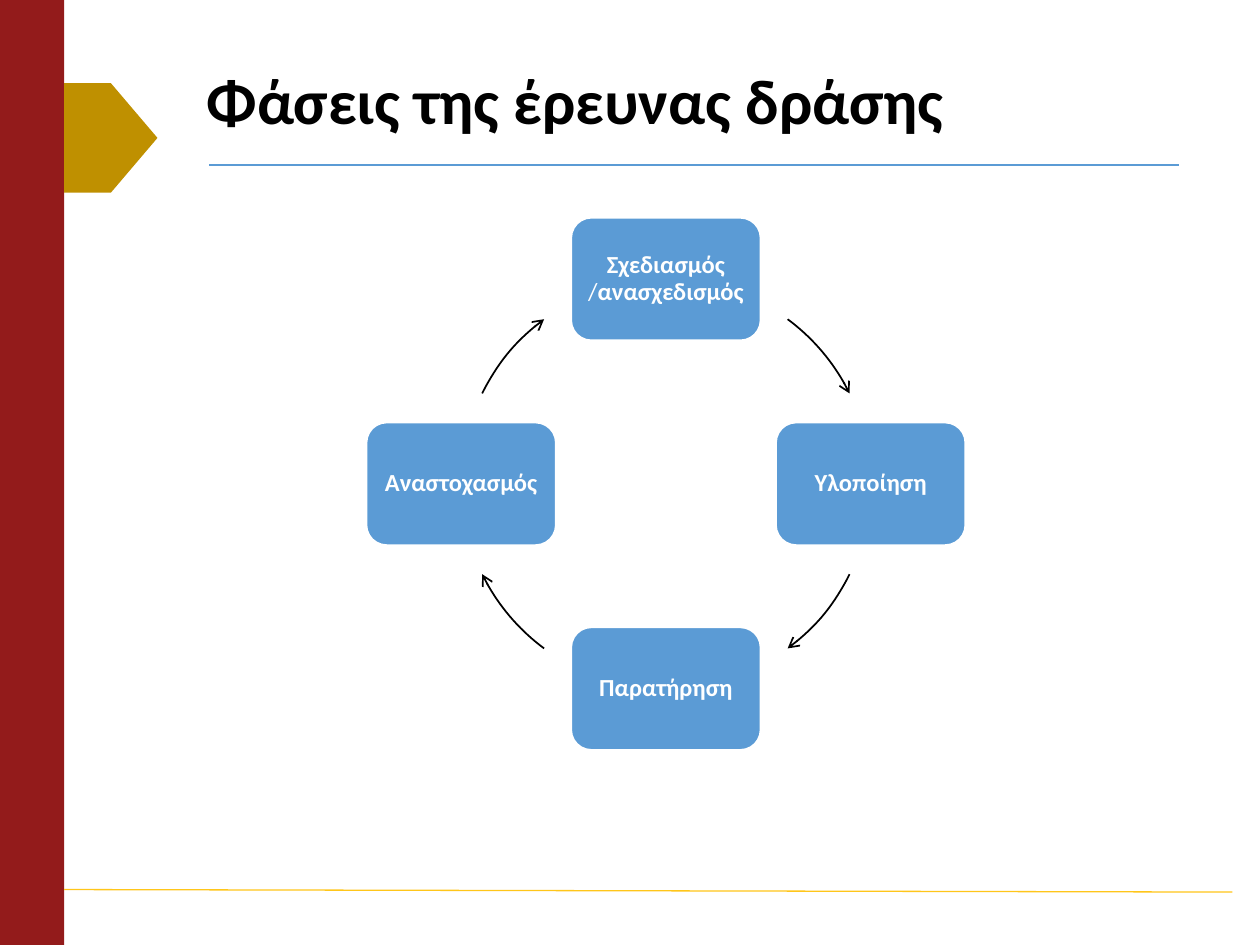
from dataclasses import dataclass

from lxml.etree import SubElement
from pptx import Presentation
from pptx.dml.color import RGBColor
from pptx.enum.shapes import MSO_CONNECTOR as Connector, MSO_SHAPE as Preset
from pptx.enum.text import MSO_ANCHOR as Anchor, MSO_AUTO_SIZE as AutoSize, PP_ALIGN as Align
from pptx.oxml.ns import qn
from pptx.util import Inches, Pt

FONT = "Calibri"
BLUE, WHITE, BLACK = "5B9BD5", "FFFFFF", "000000"
CENTER_X, CENTER_Y, RADIUS = 5.285, 3.84, 1.625
BOX_WIDTH, BOX_HEIGHT = 1.51, 0.98


@dataclass
class Phase:
    runs: list[tuple[str, bool]]  # text, bold
    dx: int  # direction from the centre of the cycle
    dy: int
    arc_start: float  # arrow to the next phase, clockwise degrees
    arc_end: float


PHASES = [
    Phase([("Σχεδιασμός", True), (" /", False), ("ανασχεδισμός", True)], 0, -1, 306.5, 333.8),
    Phase([("Υλοποίηση", True)], 1, 0, 26.2, 53.5),
    Phase([("Παρατήρηση", True)], 0, 1, 126.5, 153.8),
    Phase([("Αναστοχασμός", True)], -1, 0, 206.2, 233.5),
]


def color(value: str) -> RGBColor:
    return RGBColor.from_string(value)


def add_span(para, text: str, size: float, fill: str, bold: bool) -> None:
    span = para.add_run()
    span.text = text
    span.font.name = FONT
    span.font.size = Pt(size)
    span.font.bold = bold
    span.font.color.rgb = color(fill)


def add_block(page, preset, left: float, top: float, width: float, height: float, fill: str):
    block = page.shapes.add_shape(preset, Inches(left), Inches(top), Inches(width), Inches(height))
    block.shadow.inherit = False
    block.fill.solid()
    block.fill.fore_color.rgb = color(fill)
    block.line.fill.background()
    return block


def add_rule(page, x1: float, y1: float, x2: float, y2: float, stroke: str) -> None:
    rule = page.shapes.add_connector(
        Connector.STRAIGHT, Inches(x1), Inches(y1), Inches(x2), Inches(y2))
    rule.line.color.rgb = color(stroke)
    rule.line.width = Pt(0.75)
    SubElement(rule._element.spPr, qn("a:effectLst"))


def add_phase_box(page, phase: Phase) -> None:
    left = CENTER_X + phase.dx * RADIUS - BOX_WIDTH / 2
    top = CENTER_Y + phase.dy * RADIUS - BOX_HEIGHT / 2
    box = add_block(page, Preset.ROUNDED_RECTANGLE, left, top, BOX_WIDTH, BOX_HEIGHT, BLUE)
    box.line.color.rgb = color(WHITE)
    box.line.width = Pt(1.5)
    frame = box.text_frame
    frame.word_wrap = True
    frame.vertical_anchor = Anchor.MIDDLE
    # The rounded corners add their own inset to these margins
    frame.margin_left = frame.margin_right = Inches(0.06)
    frame.margin_top = frame.margin_bottom = Inches(0.06)
    para = frame.paragraphs[0]
    para.alignment = Align.CENTER
    para.line_spacing = 0.9
    for text, bold in phase.runs:
        add_span(para, text, 14, WHITE, bold)


def add_cycle_arrow(page, phase: Phase) -> None:
    arrow = add_block(page, Preset.ARC, CENTER_X - RADIUS, CENTER_Y - RADIUS,
                      2 * RADIUS, 2 * RADIUS, WHITE)
    arrow.fill.background()
    # Angles are stored in 1/60000 degree, adjustments in 1/100000
    arrow.adjustments[0] = phase.arc_start * 0.6
    arrow.adjustments[1] = phase.arc_end * 0.6
    arrow.line.color.rgb = color(BLACK)
    arrow.line.width = Pt(1)
    SubElement(arrow.line._get_or_add_ln(), qn("a:tailEnd"), type="arrow")


def add_title(page, text: str) -> None:
    title = page.shapes.title
    title.left, title.top = Inches(1.54), Inches(0.41)
    title.width, title.height = Inches(7.87), Inches(0.84)
    frame = title.text_frame
    frame.auto_size = AutoSize.NONE
    frame.vertical_anchor = Anchor.MIDDLE
    para = frame.paragraphs[0]
    para.alignment = Align.LEFT
    para.line_spacing = 0.9
    add_span(para, text, 36, BLACK, True)


def main() -> None:
    deck = Presentation()
    deck.slide_width, deck.slide_height = Inches(10), Inches(7.5)
    page = deck.slides.add_slide(deck.slide_layouts[5])

    # Side band, tab and rules
    add_block(page, Preset.RECTANGLE, 0, 0, 0.51, 7.5, "931B1B")
    add_rule(page, 1.66, 1.31, 9.36, 1.31, BLUE)
    add_rule(page, 0.51, 7.06, 9.78, 7.08, "FFC61A")
    add_block(page, Preset.PENTAGON, 0.51, 0.66, 0.74, 0.87, "BF9000")

    add_title(page, "Φάσεις της έρευνας δράσης")

    # Cycle of phases
    for phase in PHASES:
        add_phase_box(page, phase)
        add_cycle_arrow(page, phase)

    deck.save("out.pptx")


if __name__ == "__main__":
    main()
